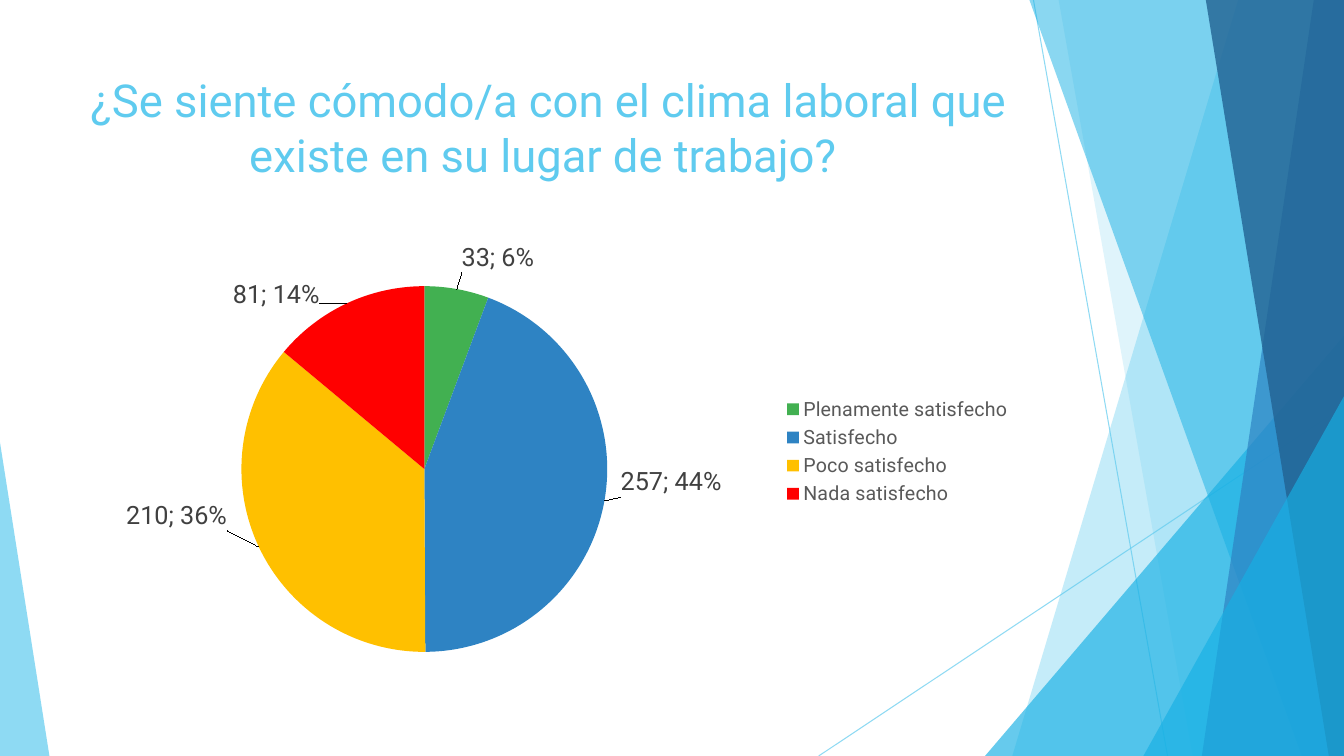
from lxml.etree import SubElement
from pptx import Presentation
from pptx.chart.data import CategoryChartData
from pptx.dml.color import RGBColor
from pptx.enum.chart import XL_CHART_TYPE as ChartType
from pptx.enum.chart import XL_LABEL_POSITION as LabelPosition
from pptx.enum.chart import XL_LEGEND_POSITION as LegendPosition
from pptx.enum.shapes import MSO_CONNECTOR as Connector
from pptx.enum.shapes import MSO_SHAPE as Shape
from pptx.enum.text import MSO_ANCHOR as Anchor
from pptx.enum.text import PP_ALIGN as Align
from pptx.oxml import parse_xml
from pptx.oxml.ns import nsdecls, qn
from pptx.util import Pt

PX = 9144  # 100 px to the inch
WIDTH, HEIGHT = 1333, 750
COLORS = {
    "sky": "5FCBEF", "cyan": "17B0E4", "blue": "2E83C3", "navy": "226292",
    "green": "42B051", "amber": "FFC000", "red": "FF0000",
    "label": "404040", "legend": "595959",
}


def manual_layout(**values):
    """Layout element for a plot area or a data label."""
    items = "".join(f'<c:{key} val="{value}"/>' for key, value in values.items())
    return parse_xml(f'<c:layout {nsdecls("c")}><c:manualLayout>{items}'
                     "</c:manualLayout></c:layout>")


class SlideBuilder:
    font = "Roboto"

    def __init__(self, page):
        self.page = page

    def color(self, name):
        return RGBColor.from_string(COLORS[name])

    def style_font(self, font, size, color):
        font.name, font.size = self.font, Pt(size)
        font.color.rgb = self.color(color)

    def set_alpha(self, shape, percent):
        color = shape._element.spPr.find(".//" + qn("a:srgbClr"))
        SubElement(color, qn("a:alpha"), val=str(percent * 1000))

    def paint(self, shape, color, alpha):
        shape.shadow.inherit = False
        shape.line.fill.background()
        shape.fill.solid()
        shape.fill.fore_color.rgb = self.color(color)
        self.set_alpha(shape, alpha)

    def line(self, start, end, color, alpha):
        points = [value * PX for value in (*start, *end)]
        line = self.page.shapes.add_connector(Connector.STRAIGHT, *points)
        line.line.color.rgb = self.color(color)
        line.line.width = Pt(0.75)
        self.set_alpha(line, alpha)
        SubElement(line._element.spPr, qn("a:effectLst"))

    def band(self, top, bottom, color, alpha):
        """Full-height band from a slanted left edge to the right slide edge."""
        builder = self.page.shapes.build_freeform(top, 0, scale=PX)
        builder.add_line_segments([(WIDTH, 0), (WIDTH, HEIGHT), (bottom, HEIGHT)])
        self.paint(builder.convert_to_shape(), color, alpha)

    def triangle(self, left, top, width, apex, color, alpha):
        """Triangle that stands on the bottom edge of the slide."""
        shape = self.page.shapes.add_shape(
            Shape.ISOSCELES_TRIANGLE, left * PX, top * PX, width * PX, (HEIGHT - top) * PX)
        shape.adjustments[0] = apex
        self.paint(shape, color, alpha)

    def title(self, text, left, top, width, height):
        box = self.page.shapes.add_textbox(left * PX, top * PX, width * PX, height * PX)
        frame = box.text_frame
        frame.word_wrap = True
        frame.vertical_anchor = Anchor.TOP
        frame.text = text
        para = frame.paragraphs[0]
        para.alignment = Align.CENTER
        self.style_font(para.runs[0].font, 32.4, "sky")

    def pie(self, slices, left, top, width, height, plot):
        data = CategoryChartData()
        data.categories = [name for name, *_ in slices]
        data.add_series("Series 1", [value for _, value, *_ in slices])
        chart = self.page.shapes.add_chart(
            ChartType.PIE, left * PX, top * PX, width * PX, height * PX, data).chart
        chart.has_title = False
        chart.font.name, chart.font.size = self.font, Pt(18)

        # Legend
        chart.has_legend = True
        chart.legend.position = LegendPosition.RIGHT
        chart.legend.include_in_layout = False
        self.style_font(chart.legend.font, 14, "legend")

        # Plot area
        area = chart._chartSpace.chart.plotArea
        for old in area.findall(qn("c:layout")):
            area.remove(old)
        x, y, w, h = plot
        area.insert(0, manual_layout(
            layoutTarget="inner", xMode="edge", yMode="edge",
            x=round((x - left) / width, 3), y=round((y - top) / height, 3),
            w=round(w / width, 3), h=round(h / height, 3)))

        # Slices and their labels
        chart.plots[0].vary_by_categories = True
        series = chart.plots[0].series[0]
        labels = series.data_labels
        labels.show_value = labels.show_percentage = True
        labels.position = LabelPosition.OUTSIDE_END
        self.style_font(labels.font, 18, "label")
        for index, (_, _, color, _) in enumerate(slices):
            point = series.points[index]
            point.format.fill.solid()
            point.format.fill.fore_color.rgb = self.color(color)
            self.style_font(point.data_label.font, 18, "label")
            point.data_label.position = LabelPosition.OUTSIDE_END
        for label, (*_, (dx, dy)) in zip(series._element.xpath(".//c:dLbl"), slices):
            label.find(qn("c:idx")).addnext(
                manual_layout(x=round(dx / width, 3), y=round(dy / height, 3)))
            label.find(qn("c:showPercent")).set("val", "1")
        for flag in series._element.xpath(".//c:showBubbleSize"):
            flag.addnext(parse_xml(f'<c:separator {nsdecls("c")}>; </c:separator>'))


def main():
    deck = Presentation()
    deck.slide_width, deck.slide_height = WIDTH * PX, HEIGHT * PX
    slide = SlideBuilder(deck.slides.add_slide(deck.slide_layouts[6]))

    # Faceted background
    slide.line((1025, 0), (1158, HEIGHT), "sky", 70)
    slide.line((WIDTH, 403), (812, HEIGHT), "sky", 70)
    slide.band(1228, 1004, "sky", 36)
    slide.band(1050, 1183, "sky", 20)
    slide.triangle(977, 333, 356, 1, "cyan", 66)
    slide.band(1021, 1291, "cyan", 50)
    slide.band(1303, 1192, "blue", 70)
    slide.band(1196, 1318, "navy", 80)
    slide.triangle(1134, 393, 199, 1, "cyan", 66)
    slide.triangle(0, 439, 49, 0, "sky", 70)

    # Question
    slide.title("¿Se siente cómodo/a con el clima laboral que existe en su lugar de trabajo? ",
                74, 67, 940, 144)

    # Answers: name, count, colour, label offset
    answers = [
        ("Plenamente satisfecho", 33, "green", (4, -10)),
        ("Satisfecho", 257, "blue", (10, -34)),
        ("Poco satisfecho", 210, "amber", (-26, -48)),
        ("Nada satisfecho", 81, "red", (-24, 12)),
    ]
    slide.pie(answers, 74, 236, 940, 424, plot=(239, 284, 363, 363))

    deck.save("out.pptx")


if __name__ == "__main__":
    main()
